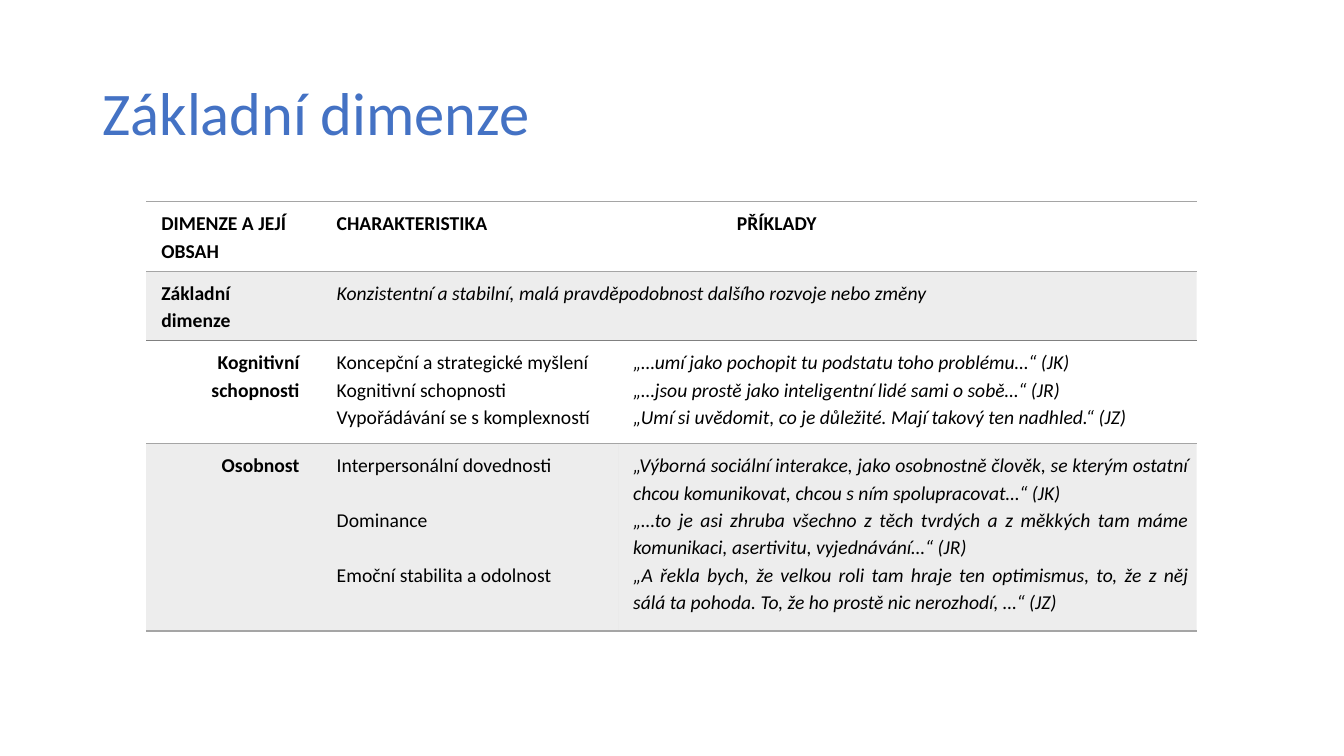
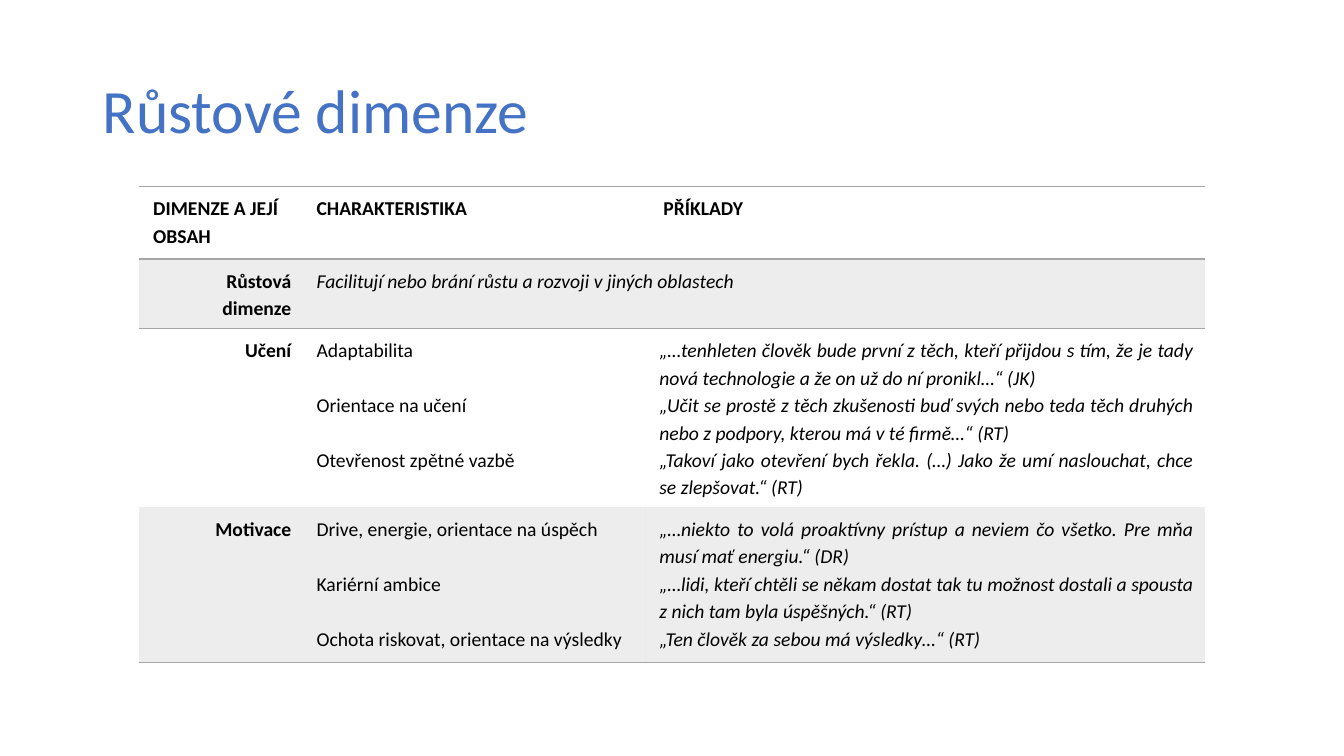
from dataclasses import dataclass

from lxml import etree
from pptx import Presentation
from pptx.dml.color import RGBColor
from pptx.enum.text import MSO_ANCHOR, MSO_AUTO_SIZE, PP_ALIGN
from pptx.oxml.ns import qn
from pptx.util import Emu, Pt

PX = 9144  # one hundredth of an inch
LEFT, RIGHT, JUSTIFY = PP_ALIGN.LEFT, PP_ALIGN.RIGHT, PP_ALIGN.JUSTIFY
BOTTOM, MIDDLE = MSO_ANCHOR.BOTTOM, MSO_ANCHOR.MIDDLE
PLAIN_TABLE_STYLE = "{2D5ABB26-0587-4C30-8999-92F81FD0307C}"


@dataclass(frozen=True)
class Theme:
    font: str = "Calibri"
    title_color: str = "4472C4"
    text_color: str = "000000"
    band_color: str = "A5A5A5"
    band_alpha: int = 20
    rule_color: str = "A5A5A5"
    dark_rule_color: str = "808080"
    rule_width: int = 1
    table_size: int = 14
    table_spacing: float = 1.15
    title_spacing: float = 0.9
    blank_line: float = 19.65  # height of one table line, in points


THEME = Theme()


@dataclass(frozen=True)
class TextFormat:
    bold: bool = False
    italic: bool = False
    align: PP_ALIGN = JUSTIFY


HEADER = TextFormat(bold=True, align=LEFT)
LABEL = TextFormat(bold=True, align=RIGHT)
TRAIT = TextFormat()
QUOTE = TextFormat(italic=True)


@dataclass(frozen=True)
class Cell:
    lines: tuple[str, ...]
    format: TextFormat
    span: int = 1
    indent: int = 0
    gap: float = 0


@dataclass(frozen=True)
class Row:
    height: int
    cells: tuple[Cell, ...]
    shaded: bool = False
    top: str | None = None
    bottom: str | None = None


@dataclass(frozen=True)
class Title:
    text: str
    top: int
    height: int
    size: float
    anchor: MSO_ANCHOR


@dataclass(frozen=True)
class DimensionTable:
    left: int
    top: int
    columns: tuple[int, ...]
    rows: tuple[Row, ...]
    left_margin: int
    label_margin: int  # right margin of the first column
    right_margin: int


def px(length: int) -> Emu:
    return Emu(length * PX)


def write_text(frame, lines: tuple[str, ...], *, size: float, color: str,
               spacing: float, bold: bool = False, italic: bool = False,
               align: PP_ALIGN = LEFT, gap: float = 0) -> None:
    """Write one paragraph per line, with a gap in points between them."""
    for index, line in enumerate(lines):
        paragraph = frame.add_paragraph() if index else frame.paragraphs[0]
        paragraph.alignment = align
        paragraph.line_spacing = spacing
        paragraph.space_before = Pt(gap if index else 0)
        run = paragraph.add_run()
        run.text = line
        run.font.name = THEME.font
        run.font.size = Pt(size)
        run.font.bold = bold
        run.font.italic = italic
        run.font.color.rgb = RGBColor.from_string(color)


def add_title(slide, title: Title) -> None:
    shape = slide.shapes.add_textbox(px(92), px(title.top), px(1150), px(title.height))
    frame = shape.text_frame
    frame.word_wrap = True
    frame.auto_size = MSO_AUTO_SIZE.NONE
    frame.vertical_anchor = title.anchor
    write_text(frame, (title.text,), size=title.size, color=THEME.title_color,
               spacing=THEME.title_spacing)


def add_rule(properties, side: str, color: str) -> None:
    line = etree.SubElement(properties, qn(f"a:{side}"), w=str(Pt(THEME.rule_width)))
    fill = etree.SubElement(line, qn("a:solidFill"))
    etree.SubElement(fill, qn("a:srgbClr"), val=color)


def style_cell(table_cell, row: Row) -> None:
    """Draw the rules first, then the fill, as the file format orders them."""
    properties = table_cell._tc.get_or_add_tcPr()
    for side, color in (("lnT", row.top), ("lnB", row.bottom)):
        if color:
            add_rule(properties, side, color)
    if row.shaded:
        table_cell.fill.solid()
        table_cell.fill.fore_color.rgb = RGBColor.from_string(THEME.band_color)
        color_element = properties.find(qn("a:solidFill")).find(qn("a:srgbClr"))
        etree.SubElement(color_element, qn("a:alpha"), val=str(THEME.band_alpha * 1000))
    else:
        table_cell.fill.background()


def fill_row(table, row_index: int, row: Row, layout: DimensionTable) -> None:
    for column in range(len(layout.columns)):
        style_cell(table.cell(row_index, column), row)
    column = 0
    for cell in row.cells:
        table_cell = table.cell(row_index, column)
        if cell.span > 1:
            table_cell.merge(table.cell(row_index, column + cell.span - 1))
        table_cell.margin_left = px(layout.left_margin + cell.indent)
        table_cell.margin_right = px(layout.right_margin if column else layout.label_margin)
        table_cell.margin_top = table_cell.margin_bottom = px(7)
        write_text(table_cell.text_frame, cell.lines, size=THEME.table_size,
                   color=THEME.text_color, spacing=THEME.table_spacing,
                   bold=cell.format.bold, italic=cell.format.italic,
                   align=cell.format.align, gap=cell.gap)
        column += cell.span


def add_dimension_table(slide, layout: DimensionTable) -> None:
    shape = slide.shapes.add_table(
        len(layout.rows), len(layout.columns), px(layout.left), px(layout.top),
        px(sum(layout.columns)), px(sum(row.height for row in layout.rows)))
    table = shape.table
    table.first_row = table.horz_banding = False
    table._tbl.tblPr.find(qn("a:tableStyleId")).text = PLAIN_TABLE_STYLE
    for column, width in zip(table.columns, layout.columns):
        column.width = px(width)
    for index, row in enumerate(layout.rows):
        table.rows[index].height = px(row.height)
        fill_row(table, index, row, layout)


RULE, DARK_RULE, BLANK = THEME.rule_color, THEME.dark_rule_color, THEME.blank_line
DIMENSION_HEADING = Cell(("DIMENZE A JEJÍ OBSAH",), HEADER)

BASIC_TABLE = DimensionTable(
    left=145, top=200, columns=(174, 294, 103, 471),
    left_margin=15, label_margin=22, right_margin=8,
    rows=(
        Row(69, (
            DIMENSION_HEADING,
            Cell(("CHARAKTERISTIKA",), HEADER, span=2),
            Cell(("PŘÍKLADY",), HEADER),
        ), top=RULE, bottom=RULE),
        Row(69, (
            Cell(("Základní dimenze",), HEADER),
            Cell(("Konzistentní a stabilní, malá pravděpodobnost dalšího rozvoje nebo změny",),
                 QUOTE, span=3),
        ), shaded=True, top=RULE, bottom=DARK_RULE),
        Row(102, (
            Cell(("Kognitivní schopnosti",), LABEL),
            Cell(("Koncepční a strategické myšlení",
                  "Kognitivní schopnosti",
                  "Vypořádávání se s komplexností"), TRAIT),
            Cell(("„…umí jako pochopit tu podstatu toho problému…“ (JK)",
                  "„…jsou prostě jako inteligentní lidé sami o sobě…“ (JR)",
                  "„Umí si uvědomit, co je důležité. Mají takový ten nadhled.“ (JZ)"),
                 QUOTE, span=2),
        ), top=DARK_RULE, bottom=RULE),
        Row(186, (
            Cell(("Osobnost",), LABEL),
            Cell(("Interpersonální dovednosti",
                  "Dominance",
                  "Emoční stabilita a odolnost"), TRAIT, gap=BLANK),
            Cell(("„Výborná sociální interakce, jako osobnostně člověk, se kterým ostatní "
                  "chcou komunikovat, chcou s ním spolupracovat…“ (JK)",
                  "„…to je asi zhruba všechno z těch tvrdých a z měkkých tam máme "
                  "komunikaci, asertivitu, vyjednávání…“ (JR)",
                  "„A řekla bych, že velkou roli tam hraje ten optimismus, to, že z něj sálá "
                  "ta pohoda. To, že ho prostě nic nerozhodí, …“ (JZ)"),
                 QUOTE, span=2),
        ), shaded=True, top=RULE, bottom=RULE),
    ))

GROWTH_TABLE = DimensionTable(
    left=138, top=185, columns=(162, 340, 555),
    left_margin=14, label_margin=11, right_margin=11,
    rows=(
        Row(72, (
            DIMENSION_HEADING,
            Cell(("CHARAKTERISTIKA",), HEADER),
            Cell(("PŘÍKLADY",), HEADER, indent=4),
        ), top=RULE, bottom=RULE),
        Row(69, (
            Cell(("Růstová dimenze",), LABEL),
            Cell(("Facilitují nebo brání růstu a rozvoji v jiných oblastech",), QUOTE, span=2),
        ), shaded=True, top=RULE),
        Row(177, (
            Cell(("Učení",), LABEL),
            Cell(("Adaptabilita",
                  "Orientace na učení",
                  "Otevřenost zpětné vazbě"), TRAIT, gap=BLANK),
            Cell(("„…tenhleten člověk bude první z těch, kteří přijdou s tím, že je tady "
                  "nová technologie a že on už do ní pronikl…“ (JK)",
                  "„Učit se prostě z těch zkušenosti buď svých nebo teda těch druhých "
                  "nebo z podpory, kterou má v té firmě…“ (RT)",
                  "„Takoví jako otevření bych řekla. (…) Jako že umí naslouchat, chce "
                  "se zlepšovat.“ (RT)"), QUOTE),
        )),
        Row(154, (
            Cell(("Motivace",), LABEL),
            Cell(("Drive, energie, orientace na úspěch",
                  "Kariérní ambice",
                  "Ochota riskovat, orientace na výsledky"), TRAIT, gap=BLANK),
            Cell(("„…niekto to volá proaktívny prístup a neviem čo všetko. Pre mňa "
                  "musí mať energiu.“ (DR)",
                  "„…lidi, kteří chtěli se někam dostat tak tu možnost dostali a spousta "
                  "z nich tam byla úspěšných.“ (RT)",
                  "„Ten člověk za sebou má výsledky…“ (RT)"), QUOTE),
        ), shaded=True, bottom=RULE),
    ))

SLIDES = (
    (Title("Základní dimenze", 87, 65, 43.2, BOTTOM), BASIC_TABLE),
    (Title("Růstové dimenze", 40, 145, 44, MIDDLE), GROWTH_TABLE),
)


def main() -> None:
    presentation = Presentation()
    presentation.slide_width, presentation.slide_height = px(1333), px(750)
    blank_layout = presentation.slide_layouts[6]
    for title, table in SLIDES:
        slide = presentation.slides.add_slide(blank_layout)
        add_title(slide, title)
        add_dimension_table(slide, table)
    presentation.save("out.pptx")


if __name__ == "__main__":
    main()
